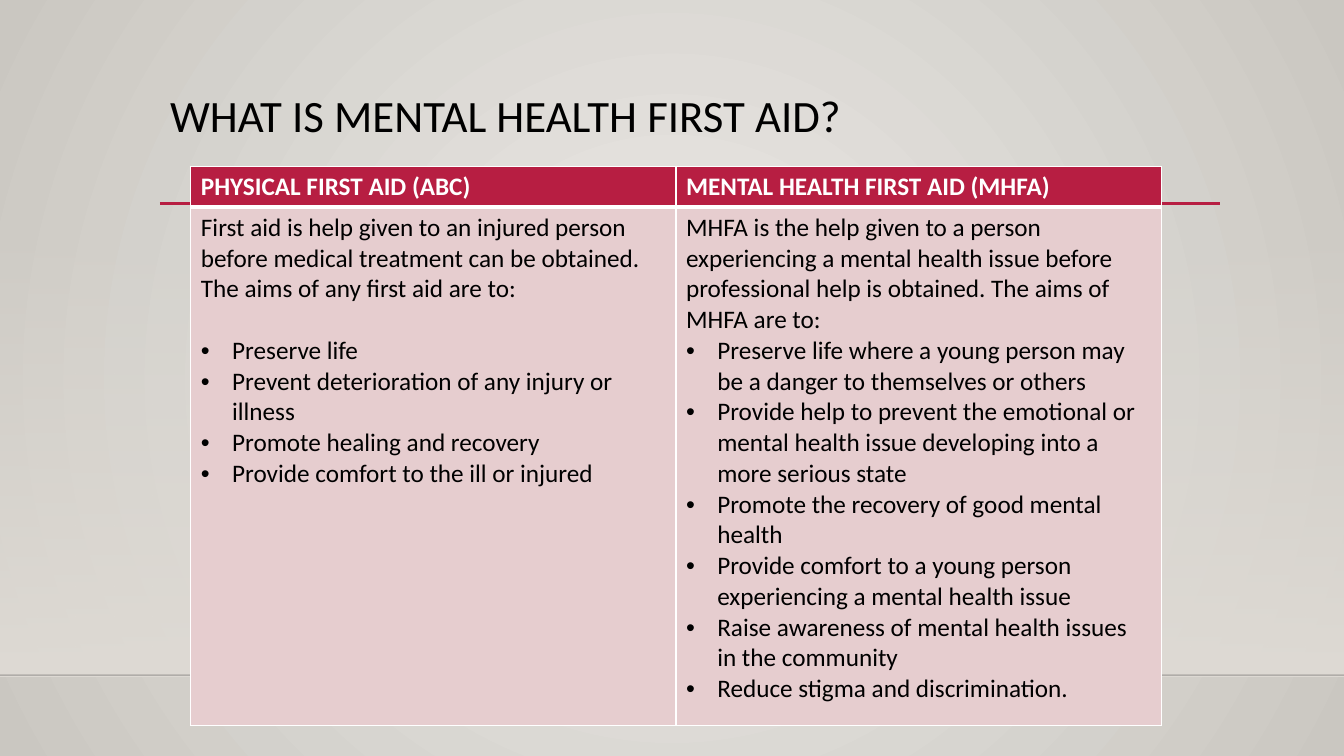
import pptx
import pptx.util
import pptx.dml.color
import pptx.enum.shapes
import pptx.enum.text
import pptx.oxml
import pptx.oxml.ns
from lxml import etree

RGB = pptx.dml.color.RGBColor
Pt = pptx.util.Pt
qn = pptx.oxml.ns.qn

RED = RGB(0xB7, 0x1E, 0x42)
PINK = RGB(0xE6, 0xCD, 0xCF)
WHITE = RGB(0xFF, 0xFF, 0xFF)
BLACK = RGB(0, 0, 0)
DARK = RGB(0, 0, 1)
LIGHT = RGB(0xEC, 0xEA, 0xE7)
GREY = RGB(0xCA, 0xC7, 0xC1)
SAND = RGB(0xDF, 0xDB, 0xD5)

WIDE, HIGH = pptx.util.Inches(13.33), pptx.util.Inches(7.5)
FONT = "Calibri"
SIZE = 18
INDENT = pptx.util.Inches(0.31)

HEADS = ["PHYSICAL FIRST AID (ABC)", "MENTAL HEALTH FIRST AID (MHFA)"]
INTROS = [
    "First aid is help given to an injured person before medical treatment "
    "can be obtained. The aims of any first aid are to:",
    "MHFA is the help given to a person experiencing a mental health issue "
    "before professional help is obtained. The aims of MHFA are to:",
]
AIMS = [
    ["Preserve life",
     "Prevent deterioration of any injury or illness",
     "Promote healing and recovery",
     "Provide comfort to the ill or injured"],
    ["Preserve life where a young person may be a danger to themselves or others",
     "Provide help to prevent the emotional or mental health issue developing "
     "into a more serious state",
     "Promote the recovery of good mental health",
     "Provide comfort to a young person experiencing a mental health issue",
     "Raise awareness of mental health issues in the community",
     "Reduce stigma and discrimination."],
]
GAPS = [Pt(22), Pt(0)]  # space above the first aim of each column


def area(left, top, width, height):
    """Turn shares of the slide into a box."""
    return (round(WIDE * left), round(HIGH * top),
            round(WIDE * width), round(HIGH * height))


def fade(color, share):
    """Set the opacity of a colour element, in percent."""
    etree.SubElement(color, qn("a:alpha"), val=str(share * 1000))


def blend(fill, first, last):
    fill.gradient()
    for stop, color, place in zip(fill.gradient_stops, (first, last), (0, 1)):
        stop.color.rgb = color
        stop.position = place


def paint_back(slide):
    fill = slide.background.fill
    blend(fill, LIGHT, GREY)
    lin = next(slide.element.iter(qn("a:lin")))
    ring = etree.Element(qn("a:path"), path="circle")
    etree.SubElement(ring, qn("a:fillToRect"), l="50000", t="50000",
                     r="50000", b="50000")
    lin.getparent().replace(lin, ring)


def add_wall(slide):
    kind = pptx.enum.shapes.MSO_SHAPE.RECTANGLE
    wall = slide.shapes.add_shape(kind, *area(0, 0.295, 1, 0.6))
    wall.shadow.inherit = False
    wall.line.fill.background()
    blend(wall.fill, SAND, SAND)
    wall.fill.gradient_angle = 270
    fade(next(wall.element.iter(qn("a:srgbClr"))), 0)


def add_rule(slide, left, right, top, color, width):
    x, y, span, _ = area(left, top, right - left, 0)
    kind = pptx.enum.shapes.MSO_CONNECTOR.STRAIGHT
    rule = slide.shapes.add_connector(kind, x, y, x + span, y)
    rule.line.color.rgb = color
    rule.line.width = Pt(width)
    etree.SubElement(rule.element.spPr, qn("a:effectLst"))
    return rule


def style(para, size, color, bold=False):
    for run in para.runs:
        run.font.name = FONT
        run.font.size = Pt(size)
        run.font.bold = bold
        run.font.color.rgb = color


def set_title(slide, text):
    title = slide.shapes.title
    title.element.getparent().append(title.element)
    title.left, title.top, title.width, title.height = area(
        0.119, 0.117, 0.788, 0.153)
    frame = title.text_frame
    frame.text = text
    frame.word_wrap = True
    frame.vertical_anchor = pptx.enum.text.MSO_ANCHOR.TOP
    para = frame.paragraphs[0]
    para.alignment = pptx.enum.text.PP_ALIGN.LEFT
    para.line_spacing = 0.9
    style(para, 32, BLACK)


def set_cell(cell, color, base):
    """Fill a cell and rule it in white, with base as the lower line width."""
    props = cell._tc.get_or_add_tcPr()
    for side, width in zip("LRTB", (1, 1, 1, base)):
        line = etree.SubElement(props, qn("a:ln" + side), w=str(Pt(width)))
        fill = etree.SubElement(line, qn("a:solidFill"))
        etree.SubElement(fill, qn("a:srgbClr"), val=str(WHITE))
    cell.fill.solid()
    cell.fill.fore_color.rgb = color


def add_aim(frame, text, gap):
    para = frame.add_paragraph()
    para.text = text
    props = para._p.get_or_add_pPr()
    props.set("marL", str(INDENT))
    props.set("indent", str(-INDENT))
    etree.SubElement(props, qn("a:buFont"), typeface="Arial")
    etree.SubElement(props, qn("a:buChar"), char="•")
    para.space_before = gap
    style(para, SIZE, BLACK)


def add_grid(slide):
    box = area(0.142, 0.22, 0.722, 0.74)
    grid = slide.shapes.add_table(2, len(HEADS), *box).table
    grid.horz_banding = False
    grid.rows[0].height = round(HIGH * 0.054)
    grid.rows[1].height = box[3] - grid.rows[0].height
    for col, (head, intro, aims, gap) in enumerate(
            zip(HEADS, INTROS, AIMS, GAPS)):
        top, body = grid.cell(0, col), grid.cell(1, col)
        set_cell(top, RED, 3)
        set_cell(body, PINK, 1)
        top.text_frame.text = head
        style(top.text_frame.paragraphs[0], SIZE, WHITE, True)
        body.text_frame.text = intro
        style(body.text_frame.paragraphs[0], SIZE, BLACK)
        for item, aim in enumerate(aims):
            add_aim(body.text_frame, aim, Pt(0) if item else gap)


def main():
    deck = pptx.Presentation()
    deck.slide_width, deck.slide_height = WIDE, HIGH
    slide = deck.slides.add_slide(deck.slide_layouts[5])
    paint_back(slide)
    add_wall(slide)
    floor = add_rule(slide, 0, 1, 0.893, DARK, 1)
    fade(next(floor.element.iter(qn("a:srgbClr"))), 20)
    add_rule(slide, 0.119, 0.908, 0.269, RED, 2.5)
    set_title(slide, "WHAT IS MENTAL HEALTH FIRST AID?")
    add_grid(slide)
    deck.save("out.pptx")


if __name__ == "__main__":
    main()
